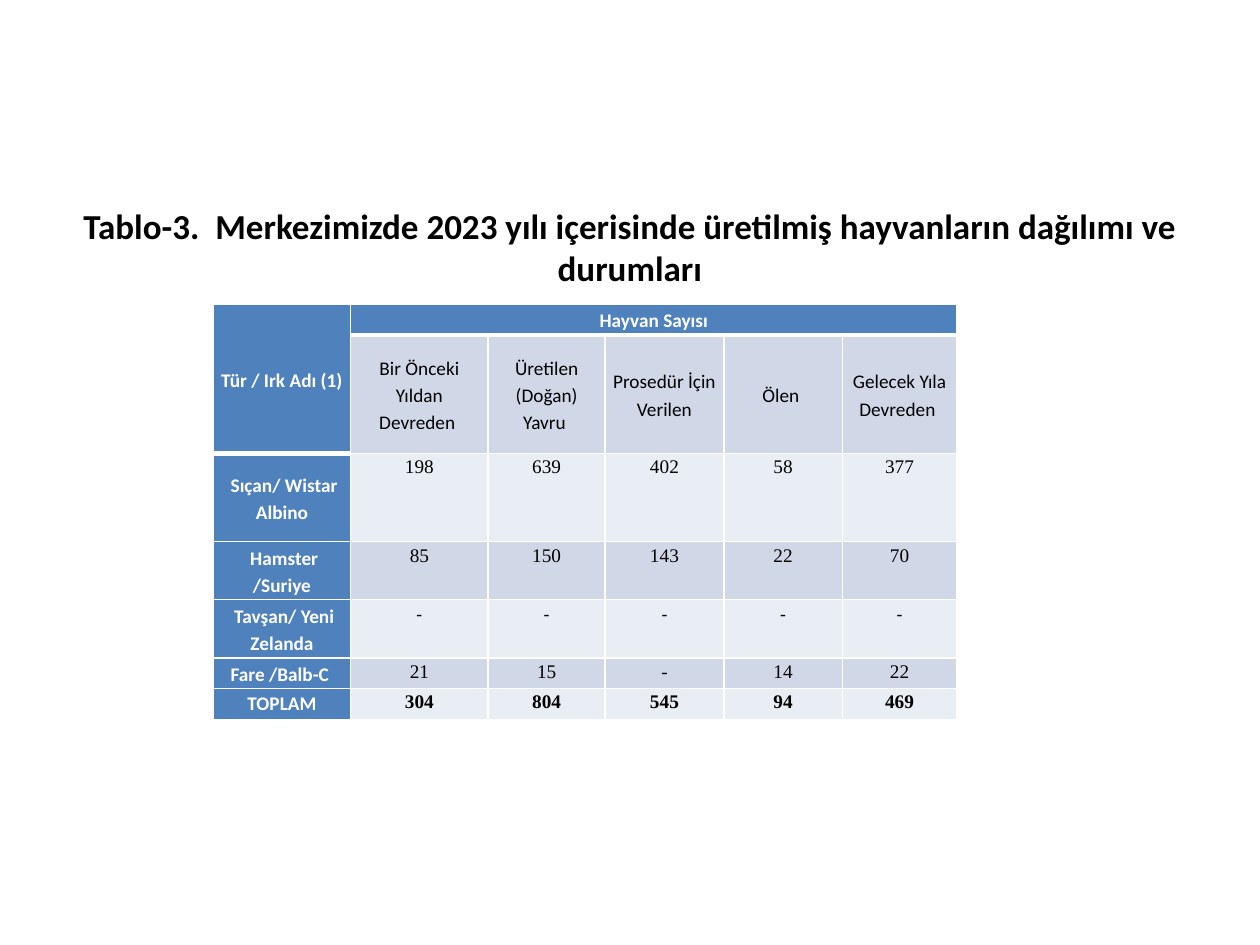
"""Builds the slide with the 2023 table of bred animals."""
from lxml import etree
from pptx import Presentation
from pptx.dml.color import RGBColor
from pptx.enum.text import MSO_ANCHOR, PP_ALIGN
from pptx.oxml.ns import qn
from pptx.util import Cm, Pt

CENTER = PP_ALIGN.CENTER
TOP, MIDDLE = MSO_ANCHOR.TOP, MSO_ANCHOR.MIDDLE

COLORS = {
    "header": "4F81BD",
    "band_dark": "D0D8E8",
    "band_light": "E9EDF4",
    "rule": "FFFFFF",
    "on_header": "FFFFFF",
    "ink": "000000",
}
SANS, SERIF = "Calibri", "Times New Roman"

TITLE = "Tablo-3.  Merkezimizde 2023 yılı içerisinde üretilmiş hayvanların dağılımı ve durumları"
SPECIES_HEADING = "Tür / Irk Adı (1)"
COUNT_HEADING = "Hayvan Sayısı"
COUNT_LABELS = ["Bir Önceki Yıldan Devreden ", "Üretilen (Doğan) Yavru ",
                "Prosedür İçin Verilen", "Ölen ", "Gelecek Yıla Devreden "]
SPECIES = [
    (" Sıçan/ Wistar Albino", SERIF, ["198", "639", "402", "58", "377"]),
    (" Hamster /Suriye", SERIF, ["85", "150", "143", "22", "70"]),
    (" Tavşan/ Yeni Zelanda", SANS, ["-"] * 5),
    ("Fare /Balb-C ", SERIF, ["21", "15", "-", "14", "22"]),
    ("TOPLAM", SERIF, ["304", "804", "545", "94", "469"]),
]
COLUMN_WIDTHS = [2.77, 2.77, 2.36, 2.39, 2.39, 2.31]
ROW_HEIGHTS = [0.62, 2.39, 1.78, 1.17, 1.17, 0.62, 0.62]

TITLE_FRAME = {"word_wrap": True, "margin_top": Cm(4.13)}
CELL_FORMAT = {"margin_left": Cm(0.13), "margin_right": Cm(0.13),
               "margin_top": Cm(0), "margin_bottom": Cm(0)}
CELL_PARAGRAPH = {"alignment": CENTER, "line_spacing": 1.15, "space_after": Pt(10)}


def apply_format(target, values):
    """Set every attribute in the dict on the target."""
    for attribute, value in values.items():
        setattr(target, attribute, value)


def write_text(frame, text, color, paragraph_format, **font_format):
    """Write one formatted paragraph into a text frame."""
    paragraph = frame.paragraphs[0]
    apply_format(paragraph, paragraph_format)
    run = paragraph.add_run()
    run.text = text
    apply_format(run.font, font_format)
    run.font.color.rgb = RGBColor.from_string(COLORS[color])


def add_title(slide):
    """Add the centred table caption."""
    title = slide.shapes.add_textbox(Cm(0), Cm(0), Cm(25.4), Cm(19.05))
    apply_format(title.text_frame, TITLE_FRAME)
    write_text(title.text_frame, TITLE, "ink", {"alignment": CENTER},
               name=SANS, size=Pt(20), bold=True)


def edge_width(row, column):
    """Return the rule width under a cell, thick below the headings."""
    return Pt(3) if (row, column > 0) in [(0, True), (1, False)] else Pt(1)


def draw_borders(cell, row, column):
    """Draw the white rules around a cell."""
    properties = cell._tc.get_or_add_tcPr()
    widths = {"L": Pt(1), "R": Pt(1),
              "T": edge_width(row - 1, column), "B": edge_width(row, column)}
    for side, width in widths.items():
        line = etree.SubElement(properties, qn(f"a:ln{side}"), w=str(width))
        fill = etree.SubElement(line, qn("a:solidFill"))
        etree.SubElement(fill, qn("a:srgbClr"), val=COLORS["rule"])


def fill_cell(cell, text, fill, color, anchor, font, bold):
    """Fill a cell and write its text."""
    apply_format(cell, {**CELL_FORMAT, "vertical_anchor": anchor})
    cell.fill.solid()
    cell.fill.fore_color.rgb = RGBColor.from_string(COLORS[fill])
    write_text(cell.text_frame, text, color, CELL_PARAGRAPH,
               name=font, size=Pt(11), bold=bold)


def fill_headings(table):
    """Write the two heading rows and merge their spans."""
    table.cell(0, 0).merge(table.cell(1, 0))
    table.cell(0, 1).merge(table.cell(0, 5))
    for column, heading in enumerate([SPECIES_HEADING, COUNT_HEADING]):
        fill_cell(table.cell(0, column), heading, "header", "on_header", MIDDLE, SANS, True)
    for column, label in enumerate(COUNT_LABELS, 1):
        fill_cell(table.cell(1, column), label, "band_dark", "ink", MIDDLE, SANS, False)


def fill_species(table):
    """Write one banded row per species and the total row."""
    for row, (species, count_font, counts) in enumerate(SPECIES, 2):
        is_total = row == len(ROW_HEIGHTS) - 1
        band = "band_dark" if row % 2 else "band_light"
        fill_cell(table.cell(row, 0), species, "header", "on_header",
                  TOP if is_total else MIDDLE, SANS, True)
        for column, count in enumerate(counts, 1):
            fill_cell(table.cell(row, column), count, band, "ink", TOP, count_font, is_total)


def add_animal_table(slide):
    """Add the table of animal counts."""
    table = slide.shapes.add_table(
        len(ROW_HEIGHTS), len(COLUMN_WIDTHS), Cm(4.3), Cm(6.13),
        Cm(sum(COLUMN_WIDTHS)), Cm(sum(ROW_HEIGHTS))).table
    apply_format(table, {"first_row": False, "horz_banding": False})
    for column, width in zip(table.columns, COLUMN_WIDTHS):
        column.width = Cm(width)
    for row, height in zip(table.rows, ROW_HEIGHTS):
        row.height = Cm(height)
    for row in range(len(ROW_HEIGHTS)):
        for column in range(len(COLUMN_WIDTHS)):
            draw_borders(table.cell(row, column), row, column)
    fill_headings(table)
    fill_species(table)


def main():
    """Build and save the slide."""
    deck = Presentation()
    apply_format(deck, {"slide_width": Cm(25.4), "slide_height": Cm(19.05)})
    slide = deck.slides.add_slide(deck.slide_layouts[6])
    add_title(slide)
    add_animal_table(slide)
    deck.save("out.pptx")


if __name__ == "__main__":
    main()
